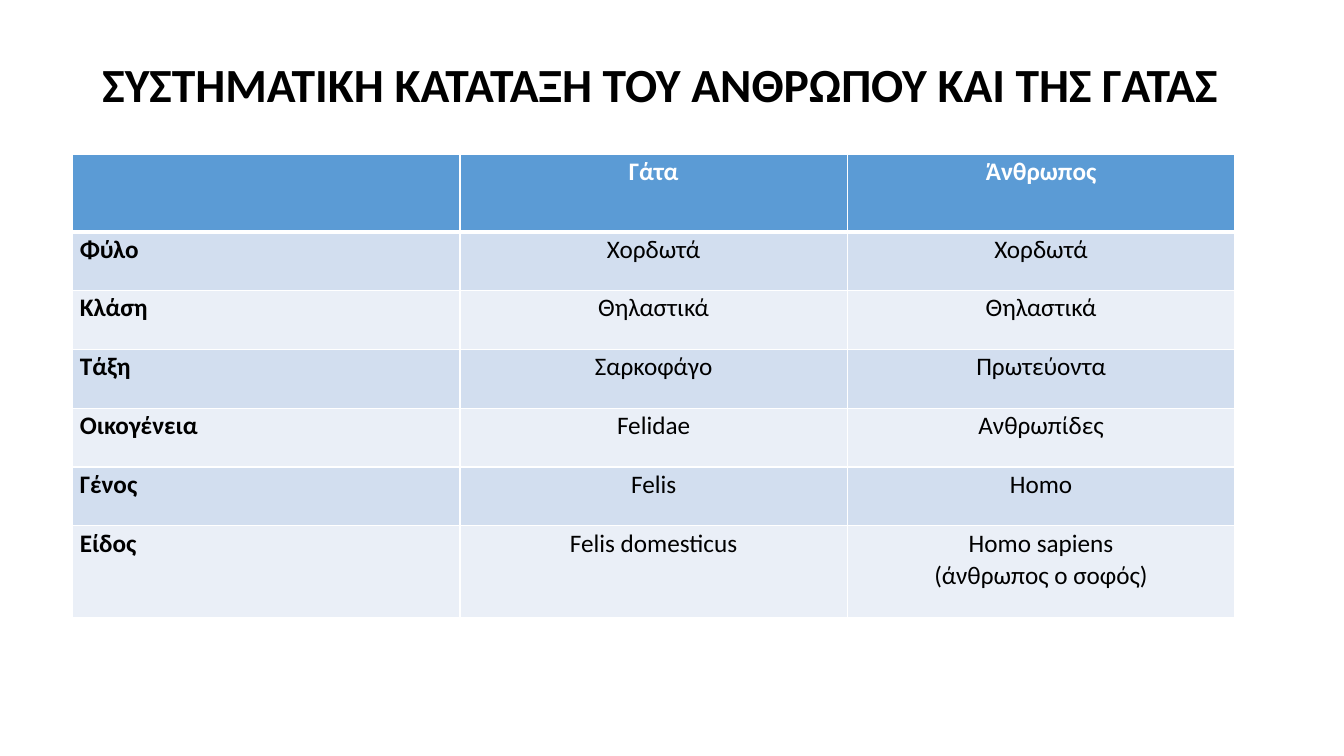
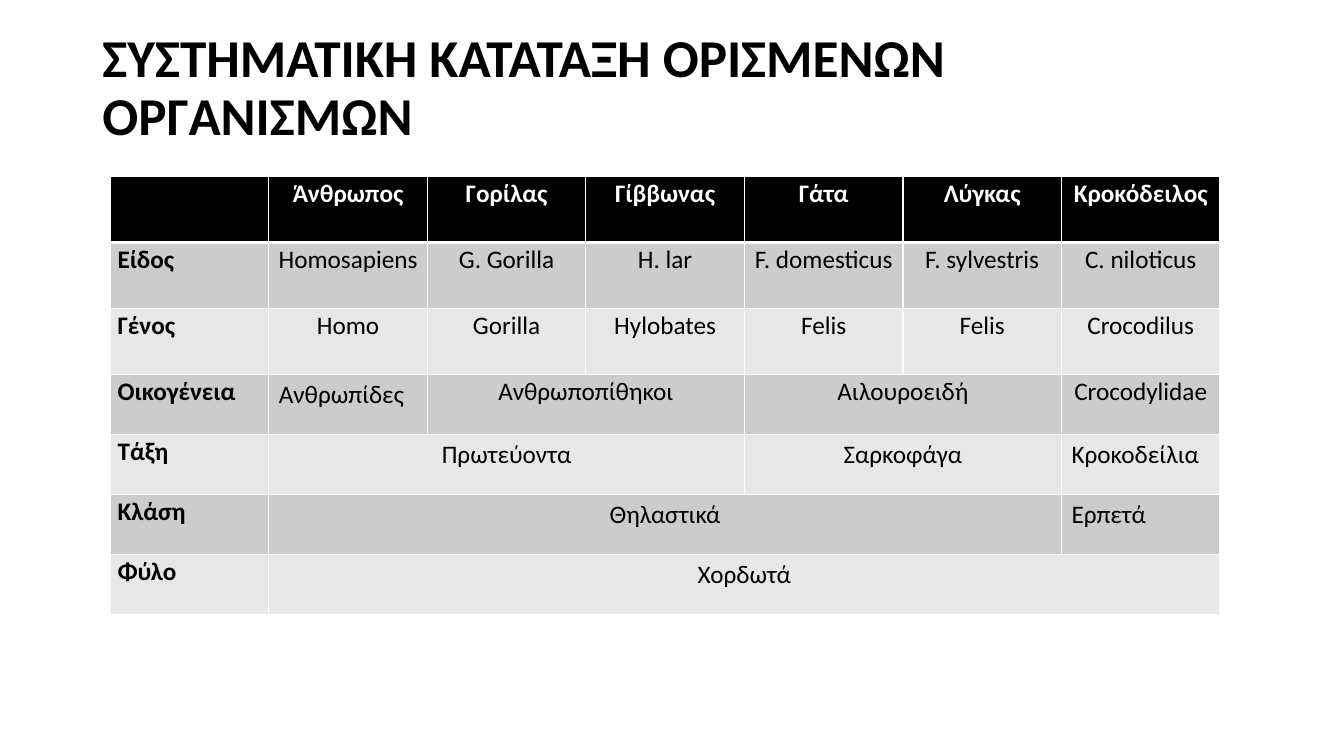
"""Build two slides that classify living things in tables."""
from dataclasses import dataclass

import lxml.etree
import pptx
import pptx.dml.color
import pptx.enum.text
import pptx.oxml.ns
import pptx.presentation
import pptx.table
import pptx.text.text
import pptx.util

SCALE = 9525
FONT = "Calibri"
RGB = pptx.dml.color.RGBColor
BLACK = RGB(0x00, 0x00, 0x00)
WHITE = RGB(0xFF, 0xFF, 0xFF)
BLUE = RGB(0x5B, 0x9B, 0xD5)
SKY = RGB(0xD2, 0xDE, 0xEF)
MIST = RGB(0xEA, 0xEF, 0xF7)
GREY = RGB(0xCC, 0xCC, 0xCC)
PALE = RGB(0xE7, 0xE7, 0xE7)
ALIGN = pptx.enum.text.PP_ALIGN
MIDDLE = pptx.enum.text.MSO_ANCHOR.MIDDLE
NO_FIT = pptx.enum.text.MSO_AUTO_SIZE.NONE


@dataclass(frozen=True)
class Cell:
    """Text that may span columns; a loose one has the default margins."""
    text: str
    span: int = 1
    loose: bool = False


@dataclass(frozen=True)
class Theme:
    """Fill colours of the head row and the two bands."""
    head: RGB
    odd: RGB
    even: RGB


@dataclass(frozen=True)
class Page:
    """One slide with a title and a table, lengths in px."""
    title: str
    size: int
    height: int
    left: int
    top: int
    width: int
    tall: tuple[int, ...]
    theme: Theme
    rows: tuple[tuple[Cell, ...], ...]


def px(count: int) -> pptx.util.Emu:
    """Turn px into EMU."""
    return pptx.util.Emu(count * SCALE)


def line(*texts: str) -> tuple[Cell, ...]:
    """Make a row of plain cells."""
    return tuple(Cell(text) for text in texts)


PAGES = (
    Page("ΣΥΣΤΗΜΑΤΙΚΗ ΚΑΤΑΤΑΞΗ ΤΟΥ ΑΝΘΡΩΠΟΥ ΚΑΙ ΤΗΣ ΓΑΤΑΣ", 34, 90,
         69, 147, 369, (74,) + (56,) * 5 + (87,), Theme(BLUE, SKY, MIST), (
             line("", "Γάτα", "Άνθρωπος"),
             line("Φύλο", "Χορδωτά", "Χορδωτά"),
             line("Κλάση", "Θηλαστικά", "Θηλαστικά"),
             line("Τάξη", "Σαρκοφάγο", "Πρωτεύοντα"),
             line("Οικογένεια", "Felidae", "Ανθρωπίδες"),
             line("Γένος", "Felis", "Homo"),
             line("Είδος", "Felis domesticus", "Homo sapiens\n(άνθρωπος ο σοφός)"),
         )),
    Page("ΣΥΣΤΗΜΑΤΙΚΗ ΚΑΤΑΤΑΞΗ ΟΡΙΣΜΕΝΩΝ ΟΡΓΑΝΙΣΜΩΝ", 38, 94,
         105, 168, 151, (63,) * 3 + (57,) * 4, Theme(BLACK, GREY, PALE), (
             line("", "Άνθρωπος", "Γορίλας", "Γίββωνας", "Γάτα", "Λύγκας",
                  "Κροκόδειλος"),
             line("Είδος", "Homosapiens", "G. Gorilla", "H. lar", "F. domesticus",
                  "F. sylvestris", "C. niloticus"),
             line("Γένος", "Homo", "Gorilla", "Hylobates", "Felis", "Felis",
                  "Crocodilus"),
             (Cell("Οικογένεια"), Cell("Ανθρωπίδες", loose=True),
              Cell("Ανθρωποπίθηκοι", 2), Cell("Αιλουροειδή", 2),
              Cell("Crocodylidae")),
             (Cell("Τάξη"), Cell("Πρωτεύοντα", 3, True),
              Cell("Σαρκοφάγα", 2, True), Cell("Κροκοδείλια", loose=True)),
             (Cell("Κλάση"), Cell("Θηλαστικά", 5, True),
              Cell("Ερπετά", loose=True)),
             (Cell("Φύλο"), Cell("Χορδωτά", 6, True)),
         )),
)


def style(frame: pptx.text.text.TextFrame, size: int, tint: RGB, bold: bool,
          align: ALIGN, space: float) -> None:
    """Format every paragraph and run of a text frame."""
    for para in frame.paragraphs:
        para.alignment = align
        para.line_spacing = space
        for run in para.runs:
            run.font.name = FONT
            run.font.size = pptx.util.Pt(size)
            run.font.bold = bold
            run.font.color.rgb = tint


def edge(box: pptx.table._Cell, row: int) -> None:
    """Draw white borders, with a thick rule below the head row."""
    props = box._tc.get_or_add_tcPr()
    widths = {"lnL": 1, "lnR": 1, "lnT": 3 if row == 1 else 1,
              "lnB": 3 if row == 0 else 1}
    for spot, (tag, width) in enumerate(widths.items()):
        rule = lxml.etree.Element(pptx.oxml.ns.qn(f"a:{tag}"),
                                  w=str(pptx.util.Pt(width)))
        fill = lxml.etree.SubElement(rule, pptx.oxml.ns.qn("a:solidFill"))
        lxml.etree.SubElement(fill, pptx.oxml.ns.qn("a:srgbClr"), val=str(WHITE))
        props.insert(spot, rule)


def write(box: pptx.table._Cell, cell: Cell, row: int, col: int) -> None:
    """Put the text of a cell in its box."""
    box.text_frame.text = cell.text
    if not cell.loose:
        box.margin_left = box.margin_right = px(7)
        box.margin_top = box.margin_bottom = 0
    left = col == 0 or (cell.loose and cell.span == 1)
    style(box.text_frame, 18, BLACK if row else WHITE, row == 0 or col == 0,
          ALIGN.LEFT if left else ALIGN.CENTER, 1.0 if cell.loose else 1.07)


def draw(deck: pptx.presentation.Presentation, page: Page) -> None:
    """Add one slide with its title and table."""
    slide = deck.slides.add_slide(deck.slide_layouts.get_by_name("Title Only"))
    title = slide.shapes.title
    title.left, title.top = px(88), px(38)
    title.width, title.height = px(1104), px(page.height)
    frame = title.text_frame
    frame.text = page.title
    frame.word_wrap = True
    frame.auto_size = NO_FIT
    frame.vertical_anchor = MIDDLE
    style(frame, page.size, BLACK, True, ALIGN.LEFT, 0.9)

    count = len(page.rows[0])
    grid = slide.shapes.add_table(
        len(page.rows), count, px(page.left), px(page.top),
        px(page.width * count), px(sum(page.tall))).table
    grid.first_row = grid.horz_banding = False
    for row, cells in enumerate(page.rows):
        grid.rows[row].height = px(page.tall[row])
        band = page.theme.odd if row % 2 else page.theme.even
        for col in range(count):
            box = grid.cell(row, col)
            box.fill.solid()
            box.fill.fore_color.rgb = band if row else page.theme.head
            edge(box, row)
        col = 0
        for cell in cells:
            box = grid.cell(row, col)
            if cell.span > 1:
                box.merge(grid.cell(row, col + cell.span - 1))
            write(box, cell, row, col)
            col += cell.span


def main() -> None:
    """Build and save the deck."""
    deck = pptx.Presentation()
    deck.slide_width, deck.slide_height = px(1280), px(720)
    for page in PAGES:
        draw(deck, page)
    deck.save("out.pptx")


if __name__ == "__main__":
    main()
